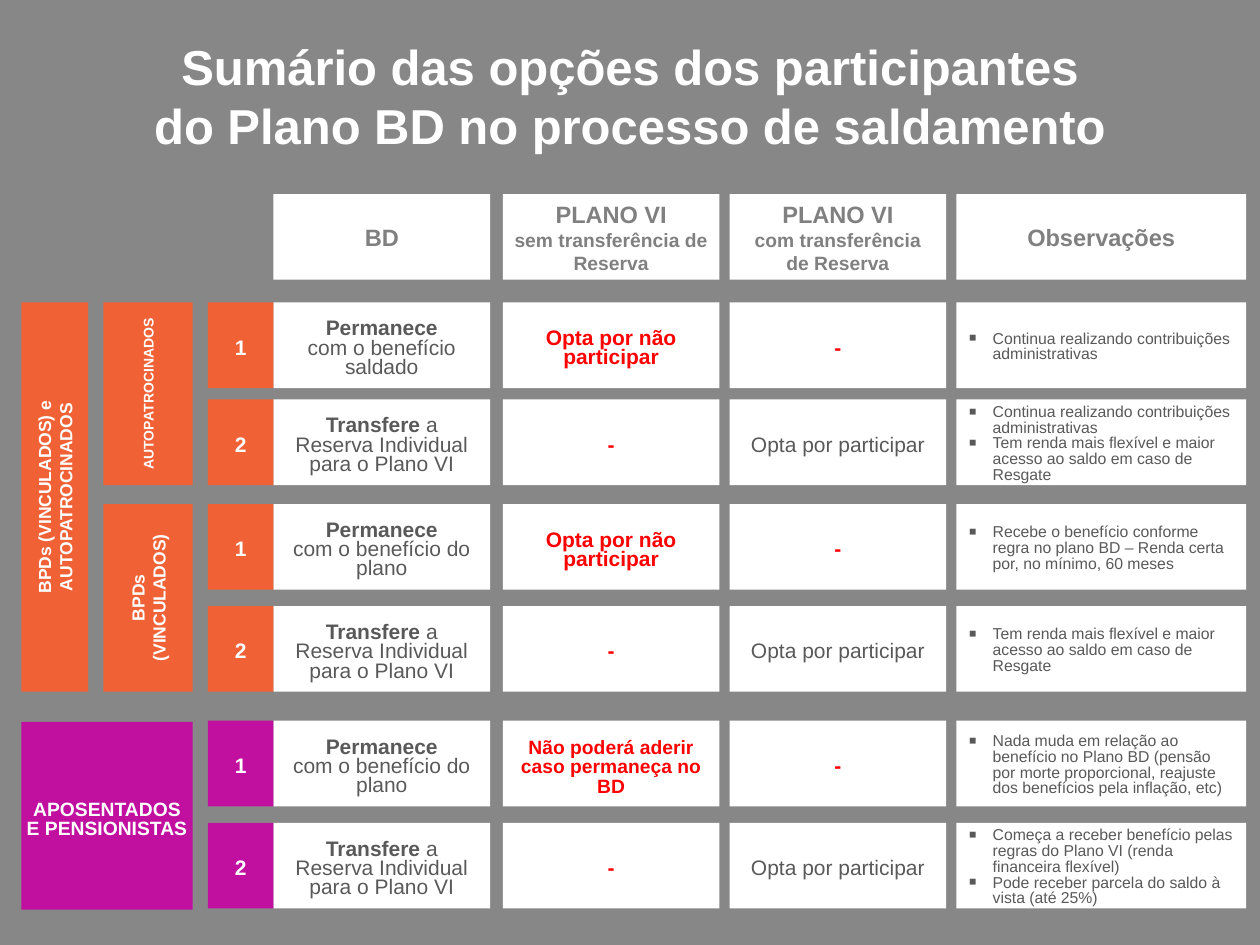
"""Build the slide summarising the options of the BD plan participants."""
from lxml import etree
from pptx import Presentation, util as u
from pptx.dml import color
from pptx.enum import shapes, text
from pptx.oxml import ns

COLORS = {"back": "878787", "white": "FFFFFF", "head": "808080", "body": "595959",
          "red": "FF0000", "orange": "F16136", "purple": "C110A0"}

TITLE = "Sumário das opções dos participantes\ndo Plano BD no processo de saldamento"
HEADERS = [
    ("bd", [("BD", 13.5)], 0.1),
    ("without", [("PLANO VI\n", 13.5), ("sem transferência de Reserva", 11)], 0),
    ("with", [("PLANO VI\n", 13.5), ("com transferência de Reserva", 11)], 0.1),
    ("notes", [("Observações", 13.5)], 0.1),
]
TRANSFER = [[("Transfere", True), (" a Reserva Individual\npara o Plano VI", False)]]
STAY_SETTLED = [[("Permanece", True)], [("com o benefício saldado", False)]]
STAY_PLAN = [[("Permanece", True)], [("com o benefício do plano", False)]]
DECLINE = "Opta por não participar"
JOIN = "Opta por participar"
ADMIN = "Continua realizando contribuições administrativas"
FLEXIBLE = "Tem renda mais flexível e maior acesso ao saldo em caso de Resgate"
OPTIONS = [
    ("1", "orange", STAY_SETTLED, DECLINE, "-", [ADMIN]),
    ("2", "orange", TRANSFER, "-", JOIN, [ADMIN, FLEXIBLE]),
    ("1", "orange", STAY_PLAN, DECLINE, "-",
     ["Recebe o benefício conforme regra no plano BD – Renda certa por, no mínimo, 60 meses"]),
    ("2", "orange", TRANSFER, "-", JOIN, [FLEXIBLE]),
    ("1", "purple", STAY_PLAN, "Não poderá aderir caso permaneça no BD", "-",
     ["Nada muda em relação ao benefício no Plano BD (pensão por morte proporcional, "
      "reajuste dos benefícios pela inflação, etc)"]),
    ("2", "purple", TRANSFER, "-", JOIN,
     ["Começa a receber benefício pelas regras do Plano VI (renda financeira flexível)",
      "Pode receber parcela do saldo à vista (até 25%)"]),
]
GROUPS = [
    ("BPDs (VINCULADOS) e AUTOPATROCINADOS", 10, "group", 0, 3),
    ("AUTOPATROCINADOS", 8, "subgroup", 0, 1),
    ("BPDs (VINCULADOS)", 10, "subgroup", 2, 3),
]

COLUMNS = {"group": (0.17, 0.53), "subgroup": (0.82, 0.71), "number": (1.65, 0.52),
           "bd": (2.17, 1.72), "without": (3.99, 1.72), "with": (5.79, 1.72),
           "notes": (7.59, 2.3)}
HEAD_TOP = 1.54
ROW_TOPS = [2.4, 3.17, 4, 4.81, 5.72, 6.53]
ROW_H = 0.68
CELL_INSETS = (0.1, 0.12, 0.1, 0.05)
NOTE_INSETS = (0.1, 0.08, 0.1, 0.05)


def rgb(name):
    return color.RGBColor.from_string(COLORS[name])


def add_box(slide, left, top, width, height, fill):
    sp = slide.shapes.add_shape(shapes.MSO_SHAPE.RECTANGLE,
                                *map(u.Inches, (left, top, width, height)))
    sp.shadow.inherit = False
    sp.fill.solid()
    sp.fill.fore_color.rgb = rgb(fill)
    sp.line.fill.background()
    return sp


def write(sp, paragraphs, ink, insets=(0.1, 0.05, 0.1, 0.05), spacing=None, bullet=False):
    """Fill a shape with paragraphs, each a list of (text, size, bold) runs."""
    tf = sp.text_frame
    tf.word_wrap = True
    tf.vertical_anchor = text.MSO_ANCHOR.MIDDLE
    tf.margin_left, tf.margin_top, tf.margin_right, tf.margin_bottom = map(u.Inches, insets)
    for i, runs in enumerate(paragraphs):
        p = tf.add_paragraph() if i else tf.paragraphs[0]
        p.alignment = text.PP_ALIGN.LEFT if bullet else text.PP_ALIGN.CENTER
        if spacing:
            p.line_spacing = u.Pt(spacing)
        if bullet:
            add_bullet(p)
        for words, size, bold in runs:
            for j, line in enumerate(words.split("\n")):
                if j:
                    p.add_line_break()
                if line:
                    r = p.add_run()
                    r.text = line
                    r.font.name, r.font.size, r.font.bold = "Arial", u.Pt(size), bold
                    r.font.color.rgb = rgb(ink)


def add_bullet(p):
    pPr = p._p.get_or_add_pPr()
    pPr.set("marL", str(u.Inches(0.19)))
    pPr.set("indent", str(u.Inches(-0.19)))
    for tag, key, value in (("buSzPct", "val", "150000"), ("buFont", "typeface", "Arial"),
                            ("buChar", "char", "▪")):
        etree.SubElement(pPr, ns.qn("a:" + tag)).set(key, value)


def add_option(slide, top, option):
    number, fill, bd, without, with_, notes = option

    def cell(column, background="white"):
        left, width = COLUMNS[column]
        return add_box(slide, left, top, width, ROW_H, background)

    write(cell("bd"), [[(t, 12, b) for t, b in runs] for runs in bd], "body", CELL_INSETS, 11)
    size = 11 if len(without) > len(DECLINE) else 12
    write(cell("without"), [[(without, size, True)]], "red", CELL_INSETS, 11)
    absent = with_ == "-"
    write(cell("with"), [[(with_, 12, absent)]], "red" if absent else "body", CELL_INSETS, 11)
    write(cell("number", fill), [[(number, 12, True)]], "white", CELL_INSETS, 11)
    write(cell("notes"), [[(n, 9, False)] for n in notes], "body", NOTE_INSETS, 9, True)


def main():
    prs = Presentation()
    prs.slide_width, prs.slide_height = u.Inches(10), u.Inches(7.5)
    slide = prs.slides.add_slide(prs.slide_layouts[6])
    add_box(slide, 0, 0, 10, 7.5, "back")

    title = slide.shapes.add_textbox(*map(u.Inches, (0, 0.28, 10, 0.94)))
    write(title, [[(TITLE, 28, True)]], "white", (0, 0.06, 0, 0.05))

    for column, runs, side in HEADERS:
        left, width = COLUMNS[column]
        sp = add_box(slide, left, HEAD_TOP, width, ROW_H, "white")
        write(sp, [[(t, size, True) for t, size in runs]], "head", (side, 0.05, side, 0.05))

    for label, size, column, first, last in GROUPS:
        left, width = COLUMNS[column]
        top = ROW_TOPS[first]
        sp = add_box(slide, left, top, width, ROW_TOPS[last] + ROW_H - top, "orange")
        write(sp, [[(label, size, True)]], "white")
        sp.text_frame._txBody.bodyPr.set("vert", "vert270")

    left = COLUMNS["group"][0]
    retired = add_box(slide, left, ROW_TOPS[4] + 0.01, sum(COLUMNS["subgroup"]) - left, 1.49, "purple")
    write(retired, [[("APOSENTADOS\nE PENSIONISTAS", 11, True)]], "white", (0, 0.12, 0, 0.05), 11)

    for top, option in zip(ROW_TOPS, OPTIONS):
        add_option(slide, top, option)
    prs.save("out.pptx")


if __name__ == "__main__":
    main()
